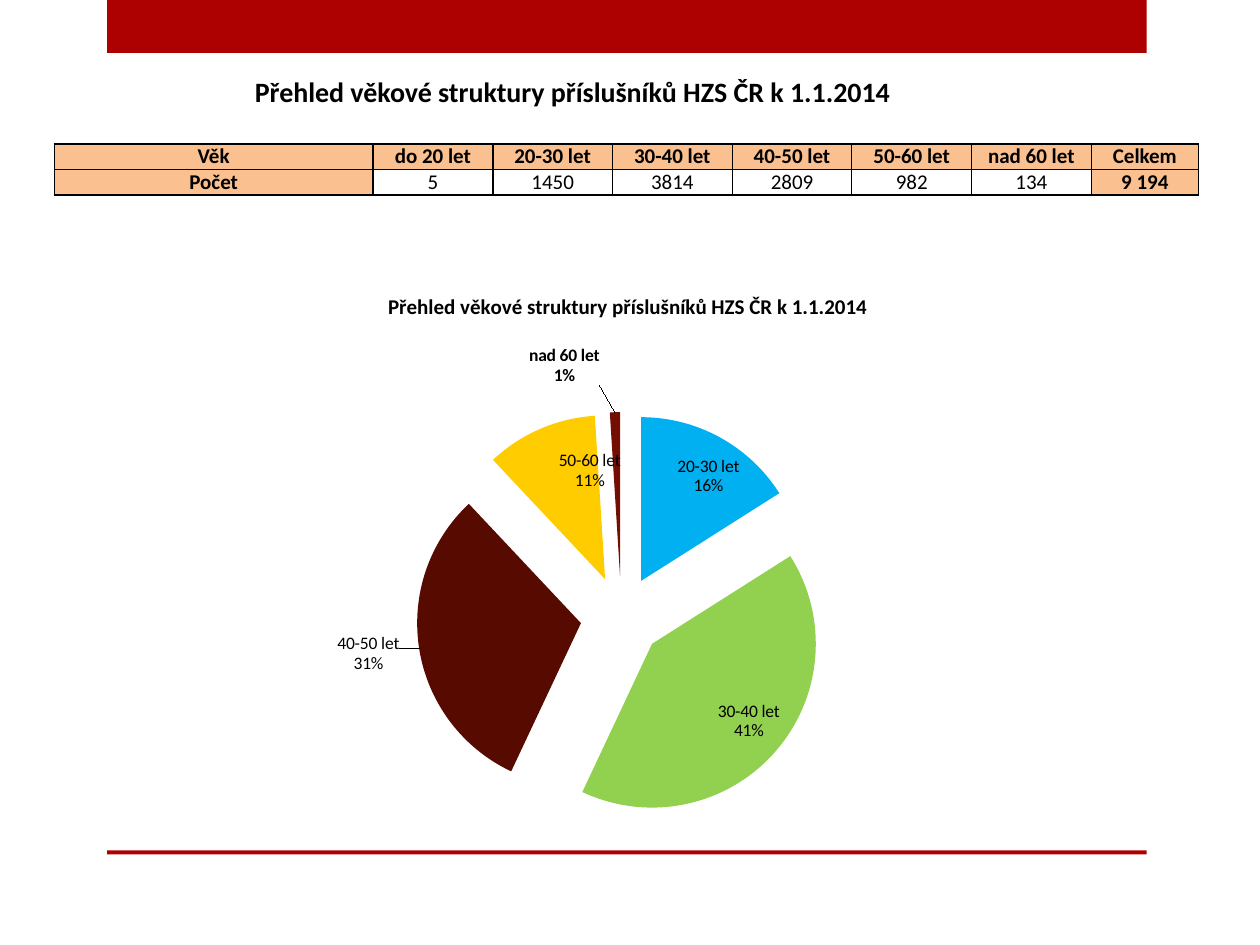
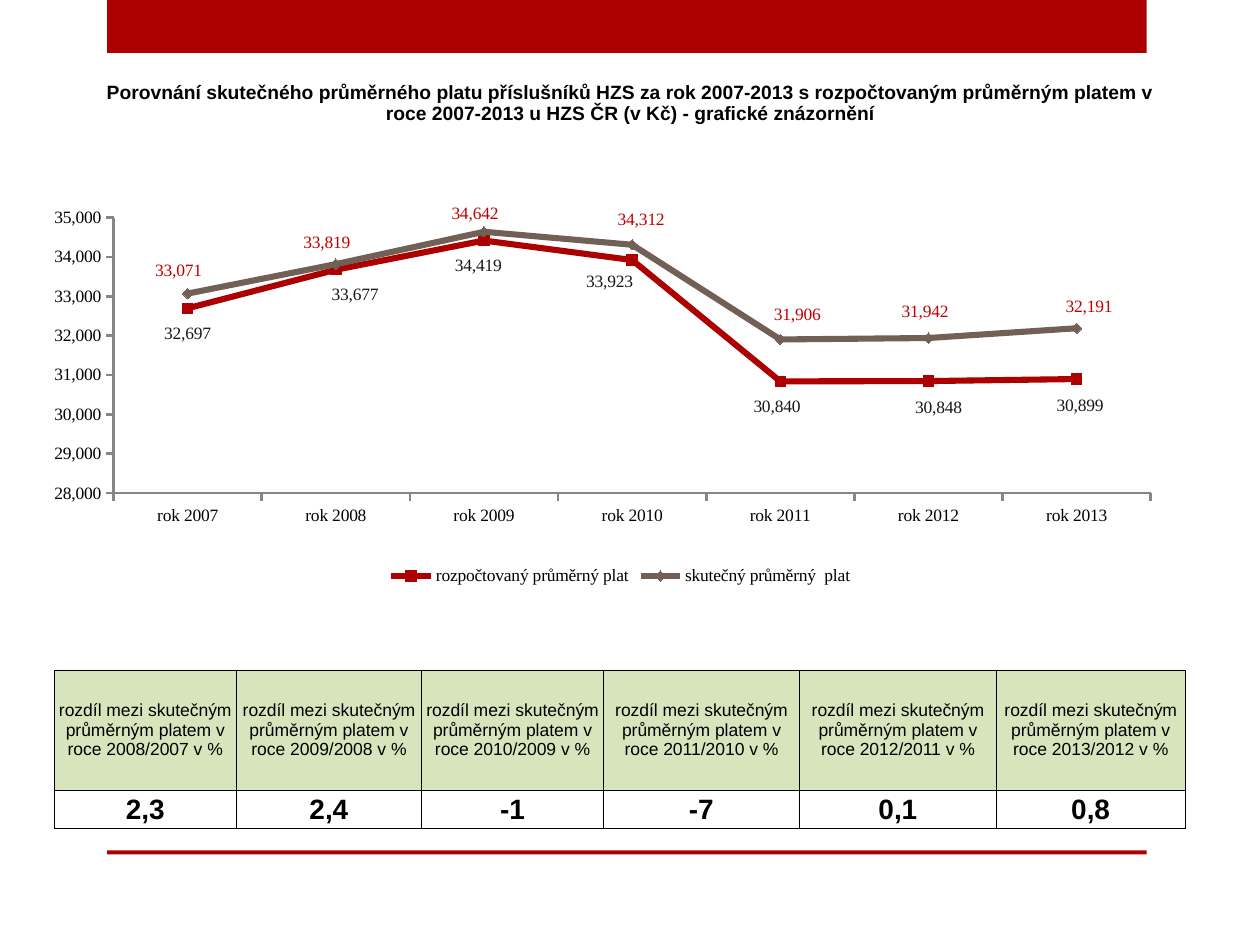
from lxml.etree import SubElement
from pptx import Presentation
from pptx.chart.data import CategoryChartData
from pptx.dml.color import RGBColor
from pptx.enum.chart import XL_CHART_TYPE as ChartType
from pptx.enum.chart import XL_LABEL_POSITION as LabelPosition
from pptx.enum.chart import XL_LEGEND_POSITION as LegendPosition
from pptx.enum.chart import XL_MARKER_STYLE as Marker
from pptx.enum.chart import XL_TICK_MARK as Tick
from pptx.enum.shapes import MSO_SHAPE
from pptx.enum.text import MSO_ANCHOR as Anchor
from pptx.enum.text import PP_ALIGN as Align
from pptx.oxml import parse_xml
from pptx.oxml.ns import nsdecls, qn
from pptx.util import Pt

COLORS = {
    "red": "AD0101", "black": "000000", "peach": "FAC090", "green": "D7E4BC",
    "axis": "868686", "taupe": "726056", "dark": "181818", "label red": "C00000",
    "blue": "00B0F0", "lime": "92D050", "brown": "560A00", "yellow": "FFCC00",
    "maroon": "730E00",
}
NO_TABLE_STYLE = "{2D5ABB26-0587-4C30-8999-92F81FD0307C}"
AGE_TITLE = "Přehled věkové struktury příslušníků HZS ČR k 1.1.2014"


def color(name):
    return RGBColor.from_string(COLORS[name])


def set_font(font, name, size, bold=False, tint="black"):
    for attribute, value in {"name": name, "size": Pt(size), "bold": bold}.items():
        setattr(font, attribute, value)
    font.color.rgb = color(tint)


def manual_layout(edge=False, **places):
    """Layout element in fractions of the chart; edge measures from its corner."""
    modes = '<c:xMode val="edge"/><c:yMode val="edge"/>' if edge else ""
    if "w" in places:
        modes = '<c:layoutTarget val="inner"/>' + modes
    values = "".join(f'<c:{key} val="{value:.3f}"/>' for key, value in places.items())
    return parse_xml(f'<c:layout {nsdecls("c")}><c:manualLayout>{modes}{values}'
                     "</c:manualLayout></c:layout>")


class Deck:
    def __init__(self):
        self.presentation = Presentation()
        self.presentation.slide_width = Pt(720)
        self.presentation.slide_height = Pt(540)
        self.slide = None

    def add_slide(self):
        """Start a slide with the red band on top and the red rule below."""
        self.slide = self.presentation.slides.add_slide(
            self.presentation.slide_layouts[6])
        self.rectangle(61.2, 0, 594, 30.2)
        self.rectangle(61.2, 486, 594, 2.2)

    def rectangle(self, *box):
        shape = self.slide.shapes.add_shape(MSO_SHAPE.RECTANGLE, *map(Pt, box))
        shape.shadow.inherit = False
        shape.fill.solid()
        shape.fill.fore_color.rgb = color("red")
        shape.line.fill.background()

    def table(self, left, top, widths, heights):
        frame = self.slide.shapes.add_table(
            len(heights), len(widths), Pt(left), Pt(top),
            Pt(sum(widths)), Pt(sum(heights)))
        table = frame.table
        table.first_row = table.horz_banding = False
        table._tbl.tblPr.find(qn("a:tableStyleId")).text = NO_TABLE_STYLE
        for column, width in zip(table.columns, widths):
            column.width = Pt(width)
        for row, height in zip(table.rows, heights):
            row.height = Pt(height)
        return table

    def cell(self, cell, text, font, size, bold=False, fill=None,
             anchor=Anchor.MIDDLE, borders=()):
        """Fill a cell; borders are the left, right, top and bottom widths."""
        for side in ("left", "right", "top", "bottom"):
            setattr(cell, f"margin_{side}", 0)
        cell.vertical_anchor = anchor
        paragraph = cell.text_frame.paragraphs[0]
        paragraph.alignment = Align.CENTER
        if text:
            run = paragraph.add_run()
            run.text = text
            set_font(run.font, font, size, bold)
        else:
            SubElement(paragraph._p, qn("a:endParaRPr"), sz=str(size * 100))
        properties = cell._tc.get_or_add_tcPr()
        for side, width in zip("LRTB", borders):
            line = SubElement(properties, qn(f"a:ln{side}"), w=str(Pt(width)))
            solid = SubElement(line, qn("a:solidFill"))
            SubElement(solid, qn("a:srgbClr"), val=COLORS["black"])
        if fill:
            cell.fill.solid()
            cell.fill.fore_color.rgb = color(fill)
        else:
            cell.fill.background()

    def chart(self, kind, box, categories, series, font, plot, number_format):
        data = CategoryChartData(number_format=number_format)
        data.categories = categories
        for name, values in series:
            data.add_series(name, values)
        chart = self.slide.shapes.add_chart(kind, *map(Pt, box), data).chart
        set_font(chart.font, font, 10)
        area = chart._chartSpace.chart.plotArea
        for layout in area.findall(qn("c:layout")):
            area.remove(layout)
        area.insert(0, manual_layout(True, **dict(zip("xywh", plot))))
        chart.has_title = chart.has_legend = False
        chart.plots[0].vary_by_categories = False
        return chart

    def point_label(self, point, shift, box, position, font, text=None,
                    bold=False, tint="black"):
        """Label a point, moved by shift in points from its usual position."""
        label = point.data_label
        if text:
            label.text_frame.text = text
            for paragraph in label.text_frame.paragraphs:
                set_font(paragraph.runs[0].font, font, 10, bold, tint)
        else:
            set_font(label.font, font, 10, bold, tint)
        label.position = position
        element = label._get_or_add_dLbl()
        element.insert(1, manual_layout(x=shift[0] / box[2], y=shift[1] / box[3]))
        return element


def age_table(deck):
    widths = [182.2] + [68.4] * 6 + [61.2]
    table = deck.table(31, 43.2, widths, [19.4, 19.4, 14.4, 14.4])
    last = len(widths) - 1
    table.cell(0, 0).merge(table.cell(0, last - 1))
    deck.cell(table.cell(0, 0), AGE_TITLE, "Calibri", 16, True)
    deck.cell(table.cell(0, last), "", "Calibri", 12)
    rows = [
        ("",) * len(widths),
        ("Věk", "do 20 let", "20-30 let", "30-40 let", "40-50 let", "50-60 let",
         "nad 60 let", "Celkem"),
        ("Počet", "5", "1450", "3814", "2809", "982", "134", "9 194"),
    ]
    edges = [1, 1, 1] + [0.5] * 4 + [1, 1]
    for row, texts in enumerate(rows, start=1):
        for column, text in enumerate(texts):
            strong = row == 2 or column in (0, last)
            middle = row == 2 and column in (0, 1, 2, last)
            deck.cell(table.cell(row, column), text, "Calibri", 12, strong,
                      fill="peach" if text and strong else None,
                      anchor=Anchor.MIDDLE if middle else Anchor.BOTTOM,
                      borders=(edges[column], edges[column + 1], 1, 1) if text else ())


def age_pie(deck):
    box = (48.2, 151.2, 612, 345.6)
    slices = [  # category, share, colour, own label, label shift
        ("do 20 let", 0, "red", None, (62, -3)),
        ("do 30 let", 16, "blue", "20-30 let\n16%", (16, -19)),
        ("do 40 let", 41, "lime", "30-40 let\n41%", (20, 13)),
        ("do 50 let", 31, "brown", "40-50 let\n31%", (-75, 10)),
        ("do 60 let", 11, "yellow", "50-60 let\n11%", (10, -19)),
        ("nad 60 let", 1, "maroon", None, (-29, -11)),
    ]
    chart = deck.chart(ChartType.PIE, box, [item[0] for item in slices],
                       [("Series 1", [item[1] for item in slices])],
                       "Calibri", (0.082, 0.244, 0.839, 0.677), "General")
    chart.has_title = True
    title = chart.chart_title
    title.text_frame.text = AGE_TITLE
    set_font(title.text_frame.paragraphs[0].runs[0].font, "Calibri", 12, True)
    for layout in title._element.findall(qn("c:layout")):
        title._element.remove(layout)
    title._element.find(qn("c:tx")).addnext(manual_layout(True, x=0.28, y=0.04))

    series = chart.plots[0].series[0]
    explosion = parse_xml(f'<c:explosion {nsdecls("c")} val="25"/>')
    series._element.find(qn("c:tx")).addnext(explosion)
    labels = series.data_labels
    labels.show_value = False
    labels.show_percentage = labels.show_category_name = True
    set_font(labels.font, "Calibri", 10, True)
    for index, (_, _, tint, text, shift) in enumerate(slices):
        point = series.points[index]
        point.format.fill.solid()
        point.format.fill.fore_color.rgb = color(tint)
        SubElement(point.format.fill._xPr.getparent(), qn("c:explosion"), val="25")
        point_element = point.format.fill._xPr.getparent()
        point_element.find(qn("c:idx")).addnext(point_element[-1])
        position = LabelPosition.CENTER if text else LabelPosition.OUTSIDE_END
        element = deck.point_label(point, shift, box, position, "Calibri", text,
                                   bold=text is None)
        for flag, value in {"Val": 0, "CatName": 1, "Percent": 1}.items():
            element.find(qn(f"c:show{flag}")).set("val", str(value))
        SubElement(element, qn("c:separator")).text = "\n"


def pay_chart(deck):
    box = (31, 116.6, 646.6, 221)
    font = "Times New Roman"
    lines = [  # name, values, line, marker, label colour, label side, label shifts
        ("rozpočtovaný průměrný plat",
         (32697, 33677, 34419, 33923, 30840, 30848, 30899),
         "red", Marker.SQUARE, "dark", LabelPosition.BELOW,
         [(0, 3), (11, 3), (-3, 3), (-13, 1), (-2, 3), (6, 4), (2, 4)]),
        ("skutečný průměrný  plat",
         (33071, 33819, 34642, 34312, 31906, 31942, 32191),
         "taupe", Marker.DIAMOND, "label red", LabelPosition.ABOVE,
         [(-5, -2), (-5, -1), (-5, 1), (5, -3), (10, -3), (-2, -4), (7, -1)]),
    ]
    chart = deck.chart(ChartType.LINE_MARKERS, box,
                       [f"rok {year}" for year in range(2007, 2014)],
                       [line[:2] for line in lines],
                       font, (0.051, 0.024, 0.918, 0.721), "#,##0")
    chart.has_legend = True
    chart.legend.position = LegendPosition.BOTTOM
    chart.legend.include_in_layout = False
    for attribute, value in {"minimum_scale": 28000, "maximum_scale": 35000,
                             "major_unit": 1000}.items():
        setattr(chart.value_axis, attribute, value)
    for axis in (chart.category_axis, chart.value_axis):
        axis.has_major_gridlines = False
        axis.major_tick_mark = Tick.OUTSIDE
        axis.format.line.color.rgb = color("axis")
        axis.format.line.width = Pt(1.5)
    for series, (_, _, tint, marker, label_tint, side, shifts) in zip(
            chart.plots[0].series, lines):
        series.smooth = False
        series.format.line.color.rgb = color(tint)
        series.format.line.width = Pt(3.5)
        series.marker.style = marker
        series.marker.size = 6
        series.marker.format.fill.solid()
        series.marker.format.fill.fore_color.rgb = color(tint)
        series.marker.format.line.color.rgb = color(tint)
        labels = series.data_labels
        labels.show_value = True
        labels.number_format = "#,##0"
        labels.number_format_is_linked = False
        set_font(labels.font, font, 10, tint=label_tint)
        for index, shift in enumerate(shifts):
            deck.point_label(series.points[index], shift, box, side, font,
                             tint=label_tint)


def pay_tables(deck):
    title = deck.table(54, 37.4, [612.7], [33.8])
    deck.cell(title.cell(0, 0),
              "Porovnání skutečného průměrného platu příslušníků HZS za rok 2007-2013 "
              "s rozpočtovaným průměrným platem v roce 2007-2013 u HZS ČR (v Kč) - "
              "grafické znázornění", "Arial", 11, True, anchor=Anchor.BOTTOM)
    table = deck.table(31, 383, [103.9, 106.1, 103.7, 112.3, 112.3, 108], [68.6, 22])
    borders = (0.5,) * 4
    for column, change in enumerate(("2,3", "2,4", "-1", "-7", "0,1", "0,8")):
        year = 2008 + column
        deck.cell(table.cell(0, column),
                  f"rozdíl mezi skutečným průměrným platem v roce {year}/{year - 1} v %",
                  "Arial", 10, fill="green", borders=borders)
        deck.cell(table.cell(1, column), change, "Arial", 16, True, borders=borders)


def main():
    deck = Deck()
    deck.add_slide()
    age_table(deck)
    age_pie(deck)
    deck.add_slide()
    pay_chart(deck)
    pay_tables(deck)
    deck.presentation.save("out.pptx")


if __name__ == "__main__":
    main()
